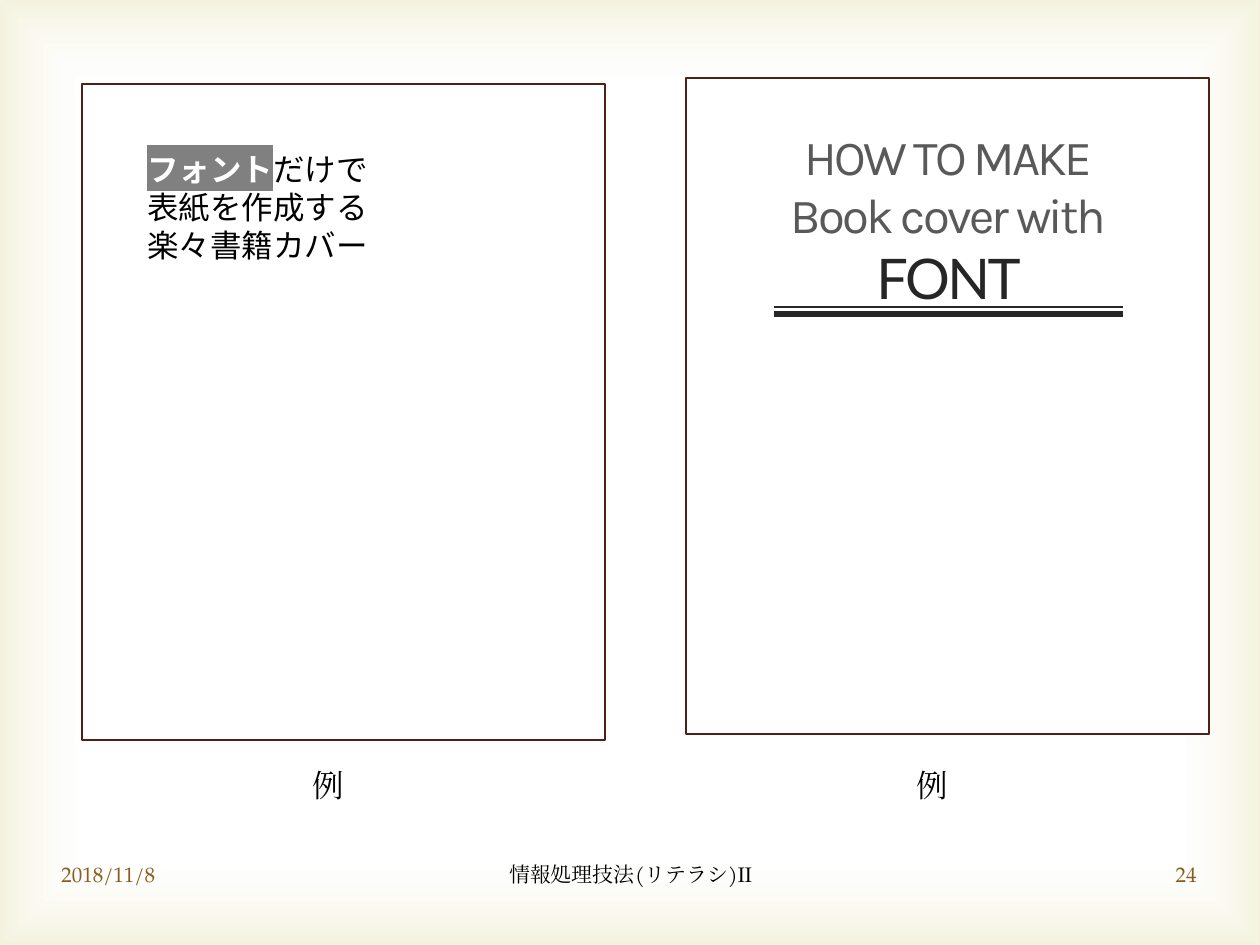
import pptx
import pptx.util
import pptx.dml.color
import pptx.enum.shapes
import pptx.enum.text
import pptx.oxml
import pptx.oxml.ns
import lxml.etree

PX = 914400 // 126
WHITE = pptx.dml.color.RGBColor(0xFF, 0xFF, 0xFF)
BLACK = pptx.dml.color.RGBColor(0x00, 0x00, 0x00)
GOLD = pptx.dml.color.RGBColor(0x89, 0x5D, 0x1D)
BROWN = pptx.dml.color.RGBColor(0x4F, 0x20, 0x15)
GRAY = pptx.dml.color.RGBColor(0x59, 0x59, 0x59)
CHARCOAL = pptx.dml.color.RGBColor(0x26, 0x26, 0x26)
HIGHLIGHT = pptx.dml.color.RGBColor(0x80, 0x80, 0x80)
SERIF = "TeX Gyre Pagella"
GOTHIC = "Noto Sans CJK JP"
LEFT = pptx.enum.text.PP_ALIGN.LEFT
CENTER = pptx.enum.text.PP_ALIGN.CENTER
RIGHT = pptx.enum.text.PP_ALIGN.RIGHT
NAMESPACE = pptx.oxml.ns.nsdecls("a")


def add_span(para, text, size=18, font=SERIF, color=BLACK, bold=False, highlight=None, spacing=0):
    span = para.add_run()
    span.text = text
    span.font.size = pptx.util.Pt(size)
    span.font.bold = bold
    span.font.color.rgb = color
    properties = span.font._element
    if spacing:
        properties.set("spc", str(spacing))
    if highlight is not None:
        properties.append(pptx.oxml.parse_xml(
            f'<a:highlight {NAMESPACE}><a:srgbClr val="{highlight}"/></a:highlight>'))
    span.font.name = font
    east_asian = lxml.etree.SubElement(properties, pptx.oxml.ns.qn("a:ea"))
    east_asian.set("typeface", font)


def add_box(page, left, top, width, height, wrap=True, grow=True):
    box = page.shapes.add_textbox(left * PX, top * PX, width * PX, height * PX)
    frame = box.text_frame
    frame.word_wrap = wrap
    if grow:
        frame.auto_size = pptx.enum.text.MSO_AUTO_SIZE.SHAPE_TO_FIT_TEXT
    else:
        frame.vertical_anchor = pptx.enum.text.MSO_ANCHOR.MIDDLE
    return frame


deck = pptx.Presentation()
deck.slide_width = 1260 * PX
deck.slide_height = 945 * PX
page = deck.slides.add_slide(deck.slide_layouts[6])
RECTANGLE = pptx.enum.shapes.MSO_SHAPE.RECTANGLE

glow = page.shapes.add_shape(RECTANGLE, 0, 0, deck.slide_width, deck.slide_height)
glow.shadow.inherit = False
glow.line.fill.background()
glow.fill.background()
gradient = pptx.oxml.parse_xml(
    f'<a:gradFill {NAMESPACE} rotWithShape="1"><a:gsLst>'
    '<a:gs pos="83000"><a:srgbClr val="FFFFFF"><a:alpha val="11000"/></a:srgbClr></a:gs>'
    '<a:gs pos="100000"><a:srgbClr val="D1CA75"><a:alpha val="23000"/></a:srgbClr></a:gs>'
    '</a:gsLst><a:path path="rect">'
    '<a:fillToRect l="50000" t="50000" r="50000" b="50000"/></a:path></a:gradFill>')
no_fill = glow._element.spPr.find(pptx.oxml.ns.qn("a:noFill"))
glow._element.spPr.replace(no_fill, gradient)

for left, width, text, align, color in (
    (49, 294, "2018/11/8", LEFT, GOLD),
    (431, 399, "情報処理技法(リテラシ)II", CENTER, BLACK),
    (915, 294, "24", RIGHT, GOLD),
):
    para = add_box(page, left, 849, width, 50, grow=False).paragraphs[0]
    para.alignment = align
    add_span(para, text, size=12, color=color)

for left, top, caption_left in ((82, 84, 300), (686, 78, 904)):
    cover = page.shapes.add_shape(RECTANGLE, left * PX, top * PX, 523 * PX, 656 * PX)
    cover.shadow.inherit = False
    cover.fill.solid()
    cover.fill.fore_color.rgb = WHITE
    cover.line.color.rgb = BROWN
    cover.line.width = pptx.util.Pt(1.5)
    caption = add_box(page, caption_left, 760, 57, 50, wrap=False)
    add_span(caption.paragraphs[0], "例")

japanese_title = add_box(page, 135, 144, 435, 127)
for index, text in enumerate(("だけで", "表紙を作成する", "楽々書籍カバー")):
    para = japanese_title.add_paragraph() if index else japanese_title.paragraphs[0]
    para.line_spacing = pptx.util.Pt(21.6)
    if index == 0:
        add_span(para, "フォント", font=GOTHIC, color=WHITE, bold=True, highlight=HIGHLIGHT)
    add_span(para, text, font=GOTHIC)

english_title = add_box(page, 685, 120, 527, 199)
for index, (text, size, font, color) in enumerate((
    ("HOW TO MAKE", 28, "Karla", GRAY),
    ("Book cover with", 28, "Karla", GRAY),
    ("FONT", 32, "Lato", CHARCOAL),
)):
    para = english_title.add_paragraph() if index else english_title.paragraphs[0]
    para.alignment = CENTER
    add_span(para, text, size=size, font=font, color=color, spacing=-150)

for height, weight in ((307, 1), (314, 3)):
    rule = page.shapes.add_connector(
        pptx.enum.shapes.MSO_CONNECTOR.STRAIGHT, 774 * PX, height * PX, 1123 * PX, height * PX)
    rule.line.color.rgb = CHARCOAL
    rule.line.width = pptx.util.Pt(weight)
    lxml.etree.SubElement(rule._element.spPr, pptx.oxml.ns.qn("a:effectLst"))

deck.save("out.pptx")
